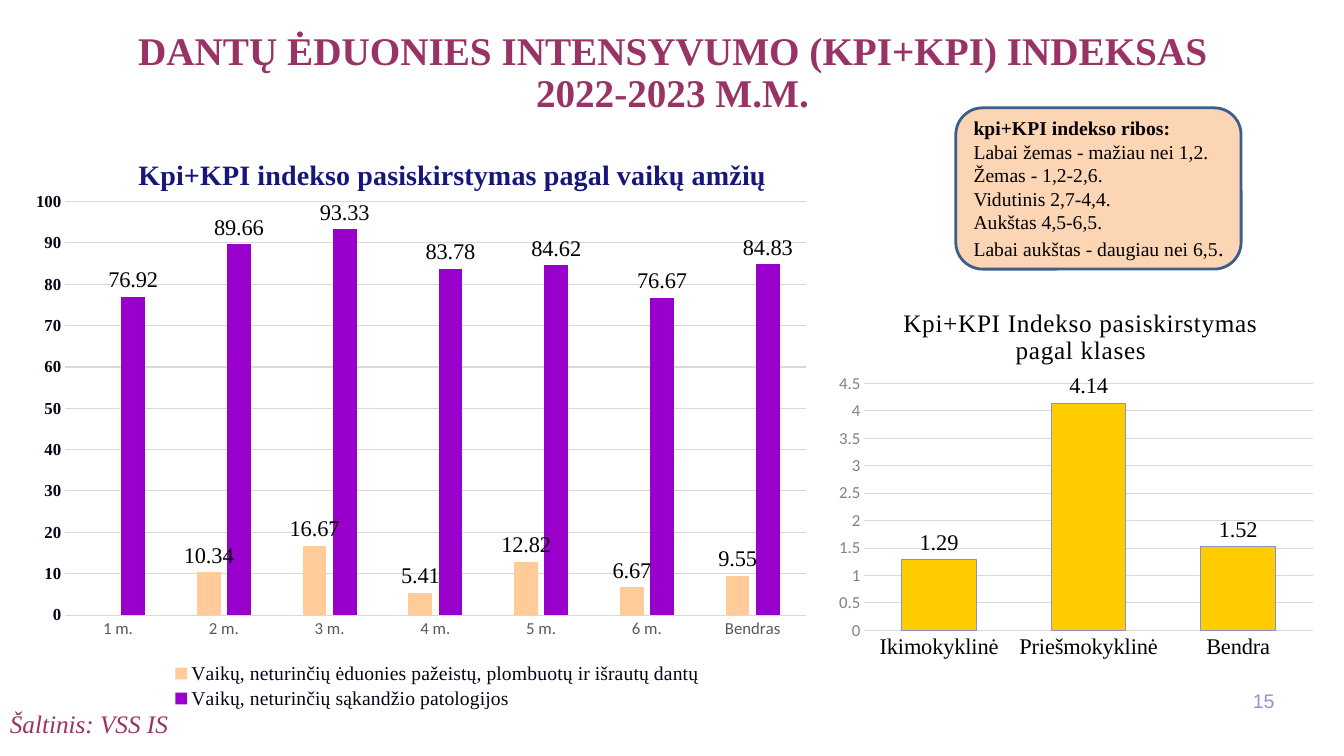
from dataclasses import dataclass

from lxml import etree
from pptx import Presentation
from pptx.chart.data import CategoryChartData
from pptx.dml.color import RGBColor
from pptx.enum.chart import (XL_CHART_TYPE as ChartType, XL_LABEL_POSITION as LabelPos,
                             XL_LEGEND_POSITION as LegendPos, XL_TICK_MARK as Tick)
from pptx.enum.shapes import MSO_SHAPE as Shape
from pptx.enum.text import MSO_ANCHOR as Anchor, PP_ALIGN as Align
from pptx.oxml.ns import qn
from pptx.util import Inches, Pt

SERIF = "Times New Roman"
COLORS = {
    "plum": "993366", "number": "8E96CD", "peach": "FCD5B5", "border": "3A5F8C",
    "black": "000000", "grid": "D9D9D9", "gray": "808080", "dark gray": "595959",
    "ink": "040415", "navy": "17177B", "yellow": "FFCC00", "bar line": "8A92C8",
    "apricot": "FFCC99", "violet": "9900CC",
}


@dataclass
class Series:
    name: str
    values: tuple
    color: str
    line: str | None = None


@dataclass
class AxisText:
    size: float
    color: str
    font: str = SERIF
    bold: bool = False


@dataclass
class ColumnChart:
    box: tuple
    title: str
    title_text: AxisText
    title_at: tuple
    plot_at: tuple
    categories: tuple
    series: tuple
    gap: int
    overlap: int
    category_text: AxisText
    value_text: AxisText
    maximum: float
    step: float
    legend_at: tuple | None = None
    title_spacing: int = 0


def rgb(name: str) -> RGBColor:
    return RGBColor.from_string(COLORS[name])


def style_font(font, size: float, color: str, name: str = SERIF,
               bold: bool = False, italic: bool = False) -> None:
    font.size, font.name, font.bold, font.italic = Pt(size), name, bold, italic
    font.color.rgb = rgb(color)


def style_axis_text(font, text: AxisText) -> None:
    style_font(font, text.size, text.color, text.font, text.bold)


def add_text(p, text: str, align=Align.LEFT, **style) -> None:
    p.alignment = align
    r = p.add_run()
    r.text = text
    style_font(r.font, **style)


def add_text_box(slide, box: tuple, text: str, **style) -> None:
    tf = slide.shapes.add_textbox(*map(Inches, box)).text_frame
    tf.word_wrap = True
    add_text(tf.paragraphs[0], text, **style)


def set_layout(element, fractions: tuple, inner: bool = False) -> None:
    """Place a chart part by fractions of the chart: x, y and optionally w, h."""
    for old in element.findall(qn("c:layout")):
        element.remove(old)
    layout = etree.Element(qn("c:layout"))
    manual = etree.SubElement(layout, qn("c:manualLayout"))
    settings = [("layoutTarget", "inner")] if inner else []
    settings += [("xMode", "edge"), ("yMode", "edge")]
    settings += zip("xywh", fractions)
    for tag, value in settings:
        etree.SubElement(manual, qn(f"c:{tag}")).set("val", str(value))
    before = [e for e in element if e.tag in (qn("c:tx"), qn("c:legendPos"))]
    element.insert(len(before), layout)


def style_axis(axis, text: AxisText) -> None:
    axis.major_tick_mark = axis.minor_tick_mark = Tick.NONE
    style_axis_text(axis.tick_labels.font, text)


def add_column_chart(slide, spec: ColumnChart) -> None:
    data = CategoryChartData()
    data.categories = spec.categories
    for s in spec.series:
        data.add_series(s.name, s.values)
    chart = slide.shapes.add_chart(ChartType.COLUMN_CLUSTERED,
                                   *map(Inches, spec.box), data).chart
    style_font(chart.font, 10, "black", "Calibri")

    p = chart.chart_title.text_frame.paragraphs[0]
    add_text(p, spec.title, Align.CENTER, size=spec.title_text.size,
             color=spec.title_text.color, bold=spec.title_text.bold)
    p.runs[0].font._element.set("spc", str(spec.title_spacing))
    chart.chart_title.include_in_layout = False
    title = chart.chart_title._element
    set_layout(title, spec.title_at)
    set_layout(chart._chartSpace.chart.plotArea, spec.plot_at, inner=True)

    style_axis(chart.category_axis, spec.category_text)
    style_axis(chart.value_axis, spec.value_text)
    values = chart.value_axis
    values.minimum_scale, values.maximum_scale = 0, spec.maximum
    values.major_unit = spec.step
    values.format.line.fill.background()
    for line in (chart.category_axis.format.line, values.major_gridlines.format.line):
        line.color.rgb, line.width = rgb("grid"), Pt(0.75)

    plot = chart.plots[0]
    plot.gap_width, plot.overlap, plot.vary_by_categories = spec.gap, spec.overlap, False
    for s, drawn in zip(spec.series, plot.series):
        drawn.format.fill.solid()
        drawn.format.fill.fore_color.rgb = rgb(s.color)
        if s.line:
            drawn.format.line.color.rgb, drawn.format.line.width = rgb(s.line), Pt(0.75)
        labels = drawn.data_labels
        labels.show_value, labels.position = True, LabelPos.OUTSIDE_END
        style_font(labels.font, 16, "black")

    chart.has_legend = spec.legend_at is not None
    if chart.has_legend:
        chart.legend.position, chart.legend.include_in_layout = LegendPos.BOTTOM, False
        style_font(chart.legend.font, 14, "ink")
        set_layout(chart.legend._element, spec.legend_at)


def add_index_limits(slide) -> None:
    sp = slide.shapes.add_shape(Shape.ROUNDED_RECTANGLE, *map(Inches, (9.48, 1.07, 2.83, 1.6)))
    sp.shadow.inherit = False
    sp.fill.solid()
    sp.fill.fore_color.rgb = rgb("peach")
    sp.line.color.rgb, sp.line.width = rgb("border"), Pt(2)
    tf = sp.text_frame
    tf.word_wrap, tf.vertical_anchor = True, Anchor.MIDDLE
    tf.margin_right = Inches(0)
    lines = ("kpi+KPI indekso ribos:", "Labai žemas - mažiau nei 1,2.", "Žemas - 1,2-2,6.",
             "Vidutinis 2,7-4,4.", "Aukštas 4,5-6,5.", "Labai aukštas - daugiau nei 6,5")
    for i, line in enumerate(lines):
        p = tf.add_paragraph() if i else tf.paragraphs[0]
        add_text(p, line, size=14, color="black", bold=i == 0)
    add_text(p, ".", size=16, color="black")


CLASS_CHART = ColumnChart(
    box=(8.23, 2.77, 4.89, 3.83), title="Kpi+KPI Indekso pasiskirstymas pagal klases",
    title_text=AxisText(18, "black"), title_at=(0.14, 0.06), title_spacing=50,
    plot_at=(0.07, 0.27, 0.91, 0.64),
    categories=("Ikimokyklinė", "Priešmokyklinė", "Bendra"),
    series=(Series("Series 1", (1.29, 4.14, 1.52), "yellow", "bar line"),),
    gap=100, overlap=-24, category_text=AxisText(16, "black"),
    value_text=AxisText(12, "gray", "Calibri"), maximum=4.5, step=0.5)

AGE_CHART = ColumnChart(
    box=(0.21, 1.21, 7.94, 5.86), title="Kpi+KPI indekso pasiskirstymas pagal vaikų amžių",
    title_text=AxisText(20, "navy", bold=True), title_at=(0.14, 0.05),
    plot_at=(0.055, 0.135, 0.925, 0.7), legend_at=(0.17, 0.91, 0.7, 0.09),
    categories=("1 m.", "2 m.", "3 m.", "4 m.", "5 m.", "6 m.", "Bendras"),
    series=(
        Series("Vaikų, neturinčių ėduonies pažeistų, plombuotų ir išrautų dantų",
               (None, 10.34, 16.67, 5.41, 12.82, 6.67, 9.55), "apricot"),
        Series("Vaikų, neturinčių sąkandžio patologijos",
               (76.92, 89.66, 93.33, 83.78, 84.62, 76.67, 84.83), "violet")),
    gap=219, overlap=-27, category_text=AxisText(12, "dark gray", "Calibri"),
    value_text=AxisText(12, "ink", bold=True), maximum=100, step=10)


def main() -> None:
    prs = Presentation()
    prs.slide_width, prs.slide_height = Inches(13.33), Inches(7.5)
    slide = prs.slides.add_slide(prs.slide_layouts[5])

    title = slide.shapes.title
    title.left, title.top, title.width, title.height = map(Inches, (0.21, 0.58, 12.92, 0.62))
    tf = title.text_frame
    tf.word_wrap, tf.vertical_anchor = True, Anchor.BOTTOM
    p = tf.paragraphs[0]
    p.line_spacing = 0.9
    style = dict(align=Align.CENTER, size=28, color="plum", bold=True)
    add_text(p, "DANTŲ ĖDUONIES INTENSYVUMO (KPI+KPI) INDEKSAS", **style)
    p.add_line_break()
    add_text(p, "2022-2023 M.M.", **style)

    add_text_box(slide, (0, 6.98, 6.3, 0.38), "Šaltinis: VSS IS",
                 size=18, color="plum", italic=True)
    add_text_box(slide, (12.22, 6.79, 0.52, 0.4), "15", align=Align.RIGHT,
                 size=14, color="number", name="Arial")
    add_index_limits(slide)
    for spec in (CLASS_CHART, AGE_CHART):
        add_column_chart(slide, spec)
    prs.save("out.pptx")


if __name__ == "__main__":
    main()
